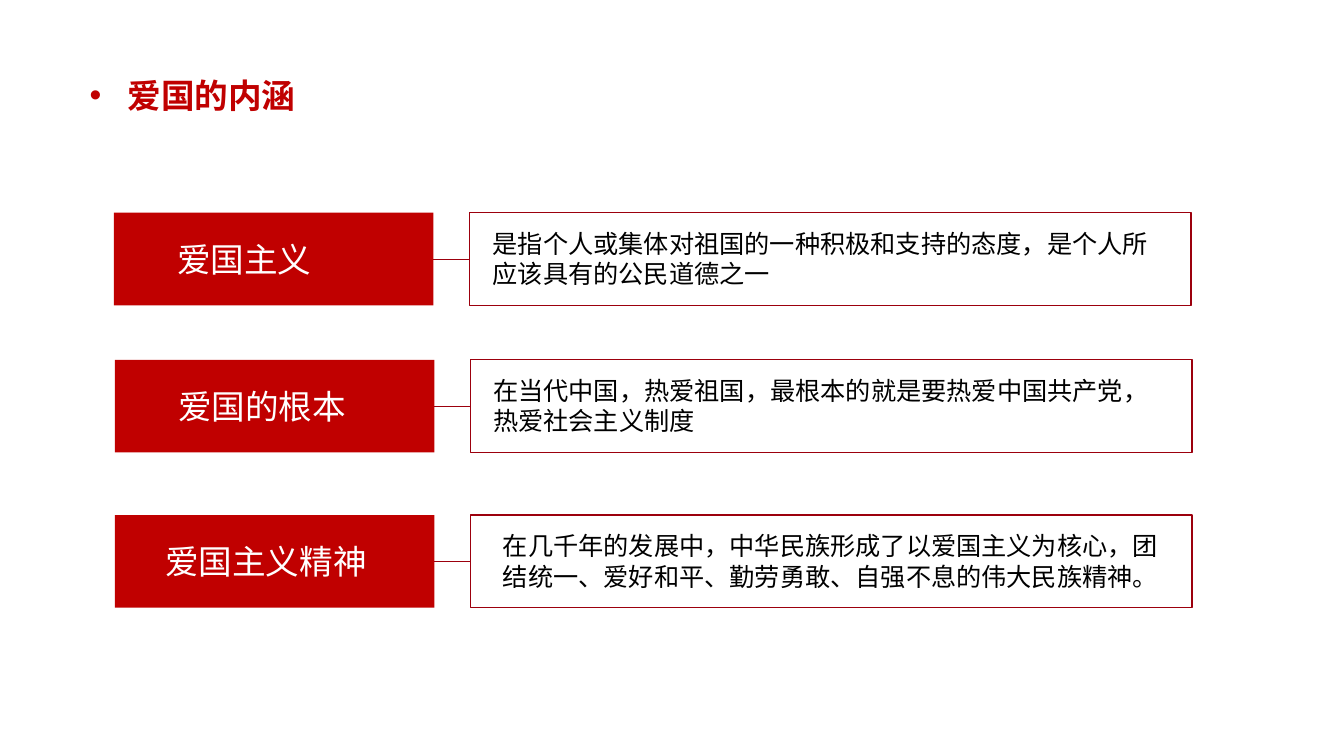
"""Build a slide on the meaning of patriotism: three tags, each tied to a card."""
from dataclasses import dataclass

from lxml import etree
from pptx import Presentation
from pptx import util as u
from pptx.dml.color import RGBColor
from pptx.enum import shapes, text
from pptx.oxml.ns import qn

Box = tuple[float, float, float, float]


@dataclass(frozen=True)
class Theme:
    """Hold the colours, font and type sizes."""
    red: str = "C00000"
    edge: str = "9C000D"
    ink: str = "000000"
    pale: str = "FFFFFF"
    font: str = "Arial"
    head: float = 24
    body: float = 18


@dataclass(frozen=True)
class Row:
    """Describe one tag and its card, with text offsets from the row's left."""
    left: float
    top: float
    tag: str
    tag_x: float
    tag_w: float
    note: str
    note_x: float
    note_w: float


LOOK = Theme()
HIGH, TAG_W, CARD_X, CARD_W = 66.2, 228.2, 254, 515.5
ROWS = [
    Row(81.4, 151.9, "爱国主义", 38, 138.2,
        "是指个人或集体对祖国的一种积极和支持的态度，是个人所应该具有的公民道德之一", 263.5, 498.2),
    Row(82.1, 257, "爱国的根本", 38, 138.2,
        "在当代中国，热爱祖国，最根本的就是要热爱中国共产党，热爱社会主义制度", 263, 498.2),
    Row(82.1, 367.9, "爱国主义精神", 28.8, 169.9,
        "在几千年的发展中，中华民族形成了以爱国主义为核心，团结统一、爱好和平、勤劳勇敢、自强不息的伟大民族精神。",
        270, 482.4),
]


def place(box: Box) -> list[u.Pt]:
    """Turn a box in points into lengths."""
    return [u.Pt(side) for side in box]


def apply(item, form: dict) -> None:
    """Set each attribute named in the format dict."""
    for key, val in form.items():
        setattr(item, key, val)


def write(shape, words: str, size: float, tint: str, bold: bool = False,
          align=text.PP_ALIGN.JUSTIFY):
    """Write one formatted paragraph and return it."""
    frame = shape.text_frame
    apply(frame, {"word_wrap": True, "vertical_anchor": text.MSO_ANCHOR.TOP,
                  "auto_size": text.MSO_AUTO_SIZE.SHAPE_TO_FIT_TEXT})
    para = frame.paragraphs[0]
    apply(para, {"alignment": align, "line_spacing": 1.0, "space_before": u.Pt(0)})
    run = para.add_run()
    run.text = words
    apply(run.font, {"name": LOOK.font, "size": u.Pt(size), "bold": bold})
    run.font.color.rgb = RGBColor.from_string(tint)
    return para


def block(group, box: Box, fill: str = "", edge: str = ""):
    """Draw a rectangle with an optional fill and outline."""
    rect = group.shapes.add_shape(shapes.MSO_SHAPE.RECTANGLE, *place(box))
    rect.shadow.inherit = False
    for part, tint in ((rect.fill, fill), (rect.line.fill, edge)):
        if tint:
            part.solid()
            part.fore_color.rgb = RGBColor.from_string(tint)
        else:
            part.background()
    if edge:
        rect.line.width = u.Pt(1)
    return rect


def link(group, tag, card) -> None:
    """Join the tag's right side to the card's left side."""
    line = group.shapes.add_connector(shapes.MSO_CONNECTOR.STRAIGHT, 0, 0, 0, 0)
    line.begin_connect(tag, 3)
    line.end_connect(card, 1)
    line.line.width = u.Pt(0.5)
    line.line.color.rgb = RGBColor.from_string(LOOK.edge)
    etree.SubElement(line._element.spPr, qn("a:effectLst"))


def draw(slide, row: Row) -> None:
    """Draw one row as a group."""
    tag = block(slide, (row.left, row.top, TAG_W, HIGH), fill=LOOK.red)
    card = block(slide, (row.left + CARD_X, row.top, CARD_W, HIGH), edge=LOOK.edge)
    group = slide.shapes.add_group_shape([tag, card])
    link(group, tag, card)
    note = group.shapes.add_textbox(
        *place((row.left + row.note_x, row.top + 7.6, row.note_w, 51)))
    write(note, row.note, LOOK.body, LOOK.ink, align=text.PP_ALIGN.LEFT)
    name = group.shapes.add_textbox(
        *place((row.left + row.tag_x, row.top + 15, row.tag_w, 36)))
    write(name, row.tag, LOOK.head, LOOK.pale)


def head(slide, words: str) -> None:
    """Fill the title placeholder with a bulleted heading."""
    title = slide.shapes.title
    apply(title, dict(zip(("left", "top", "width", "height"),
                          place((56.9, 49.7, 210.2, 36)))))
    props = write(title, words, LOOK.head, LOOK.red, bold=True)._p.get_or_add_pPr()
    props.set("marL", str(u.Pt(27)))
    props.set("indent", str(-u.Pt(27)))
    etree.SubElement(props, qn("a:buFont"), typeface=LOOK.font)
    etree.SubElement(props, qn("a:buChar"), char="•")


def main() -> None:
    """Build and save the deck."""
    deck = Presentation()
    apply(deck, {"slide_width": u.Pt(960), "slide_height": u.Pt(540)})
    slide = deck.slides.add_slide(deck.slide_layouts[5])
    head(slide, "爱国的内涵")
    for row in ROWS:
        draw(slide, row)
    deck.save("out.pptx")


if __name__ == "__main__":
    main()
